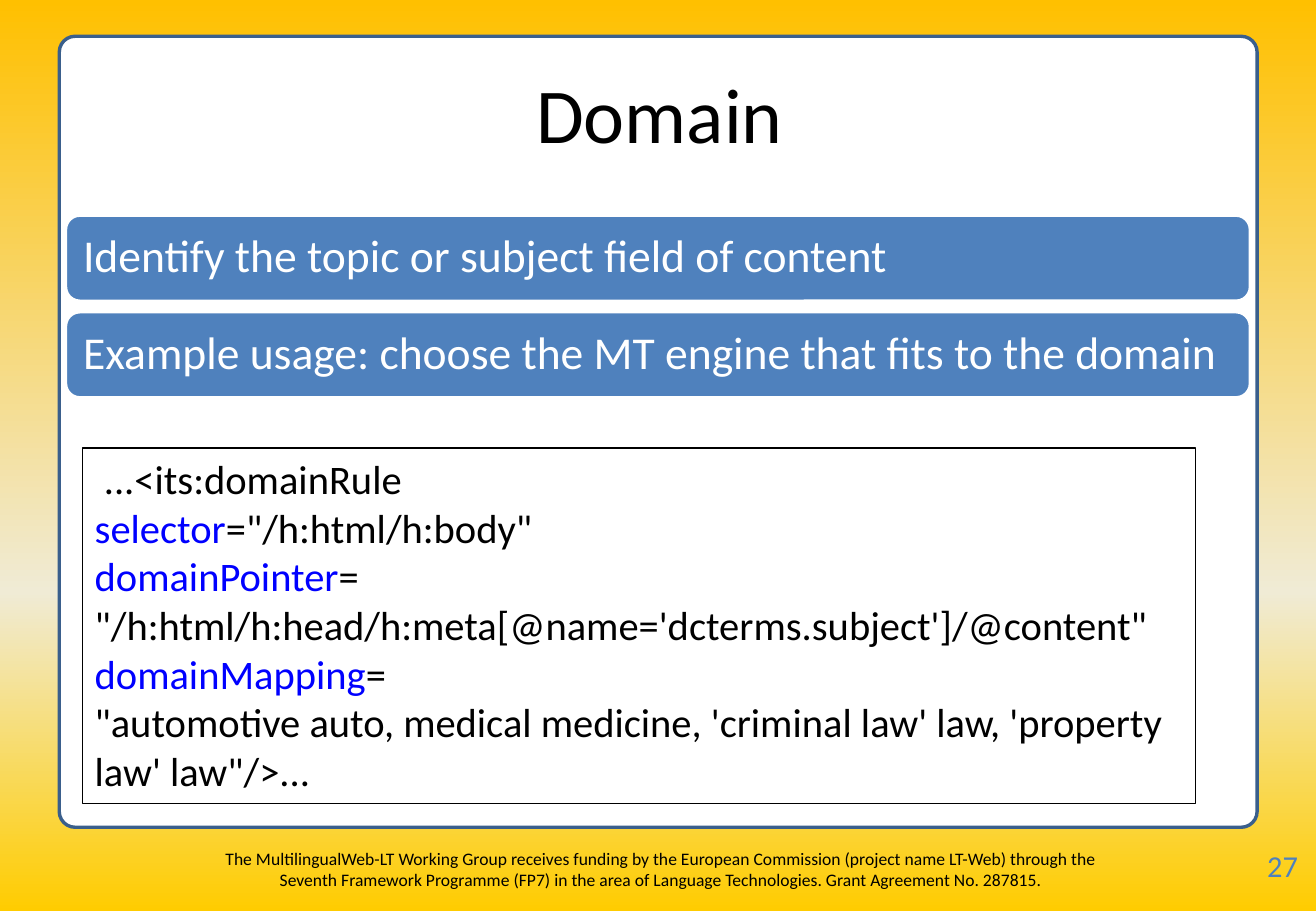
from copy import deepcopy

from pptx import Presentation
from pptx.dml.color import RGBColor
from pptx.enum.shapes import MSO_SHAPE
from pptx.enum.text import MSO_ANCHOR, PP_ALIGN
from pptx.oxml.ns import qn
from pptx.util import Cm, Pt

BLACK, WHITE, BLUE, CODE_BLUE = "000000", "FFFFFF", "4F81BD", "0000FF"
BACKGROUND = [(0, "FFC000"), (0.65, "F0EBD5"), (1, "FFCC00")]
TITLE = "Domain"
POINTS = [
    "Identify the topic or subject field of content",
    "Example usage: choose the MT engine that fits to the domain",
]
CODE = [
    [(" ...<its:domainRule", BLACK)],
    [("selector", CODE_BLUE), ("=\"/h:html/h:body\"", BLACK)],
    [("domainPointer", CODE_BLUE), ("=", BLACK)],
    [("\"/h:html/h:head/h:meta[@name='dcterms.subject']/@content\"", BLACK)],
    [("domainMapping", CODE_BLUE), ("=", BLACK)],
    [("\"automotive auto, medical medicine, 'criminal law' law, "
      "'property law' law\"/>...", BLACK)],
]
FUNDING = (
    "The MultilingualWeb-LT Working Group receives funding by the European "
    "Commission (project name LT-Web) through the Seventh Framework Programme "
    "(FP7) in the area of Language Technologies. Grant Agreement No. 287815."
)
PAGE = "27"

BAR_LEFT, BAR_TOP, BAR_WIDTH, BAR_HEIGHT, BAR_PITCH = 1.37, 4.5, 24.77, 1.8, 2.02


def rgb(color):
    return RGBColor.from_string(color)


def write(sp, text, size, color=BLACK, align=PP_ALIGN.LEFT, anchor=MSO_ANCHOR.TOP,
          margins=(0.25, 0.13), spacing=None):
    tf = sp.text_frame
    tf.word_wrap = True
    tf.vertical_anchor = anchor
    tf.margin_left = tf.margin_right = Cm(margins[0])
    tf.margin_top = tf.margin_bottom = Cm(margins[1])
    lines = [[(text, color)]] if isinstance(text, str) else text
    for i, runs in enumerate(lines):
        p = tf.add_paragraph() if i else tf.paragraphs[0]
        p.alignment = align
        p.line_spacing = spacing
        for words, run_color in runs:
            r = p.add_run()
            r.text = words
            r.font.name = "Calibri"
            r.font.size = Pt(size)
            r.font.color.rgb = rgb(run_color)


def add_box(s, kind, box, line, width, fill=None):
    sp = s.shapes.add_shape(kind, *map(Cm, box))
    sp.shadow.inherit = False
    if fill:
        sp.fill.solid()
        sp.fill.fore_color.rgb = rgb(fill)
    else:
        sp.fill.background()
    sp.line.color.rgb = rgb(line)
    sp.line.width = Pt(width)
    return sp


def paint_background(s):
    fill = s.background.fill
    fill.gradient()
    fill.gradient_angle = 270
    stops = s.element.find(".//" + qn("a:gsLst"))
    stops.append(deepcopy(stops[-1]))
    for stop, (position, color) in zip(fill.gradient_stops, BACKGROUND):
        stop.position = position
        stop.color.rgb = rgb(color)


def main():
    prs = Presentation()
    prs.slide_width, prs.slide_height = Cm(27.51), Cm(19.05)
    s = prs.slides.add_slide(prs.slide_layouts[5])
    paint_background(s)

    panel = add_box(s, MSO_SHAPE.ROUNDED_RECTANGLE, (1.24, 0.76, 25.04, 16.54),
                    "3A5F8C", 2, WHITE)
    panel.adjustments[0] = 0.02
    title = s.shapes.title
    panel.element.addnext(title.element)
    title.left, title.top, title.width, title.height = map(Cm, (1.3, 0.76, 24.97, 3.18))
    write(title, TITLE, 46, align=PP_ALIGN.CENTER, anchor=MSO_ANCHOR.MIDDLE)

    for i, point in enumerate(POINTS):
        box = (BAR_LEFT, BAR_TOP + i * BAR_PITCH, BAR_WIDTH, BAR_HEIGHT)
        bar = add_box(s, MSO_SHAPE.ROUNDED_RECTANGLE, box, WHITE, 2, BLUE)
        write(bar, point, 27, WHITE, anchor=MSO_ANCHOR.MIDDLE,
              margins=(0.28, 0.28), spacing=0.9)

    code = add_box(s, MSO_SHAPE.RECTANGLE, (1.73, 9.37, 23.27, 7.44), BLACK, 0.75)
    write(code, CODE, 24)

    funding = s.shapes.add_textbox(*map(Cm, (4.11, 17.6, 19.41, 1.02)))
    write(funding, FUNDING, 10.4, align=PP_ALIGN.CENTER)
    number = s.shapes.add_textbox(*map(Cm, (26.44, 17.68, 1.05, 1.02)))
    write(number, PAGE, 18, BLUE, margins=(0.05, 0.03))

    prs.save("out.pptx")


if __name__ == "__main__":
    main()
